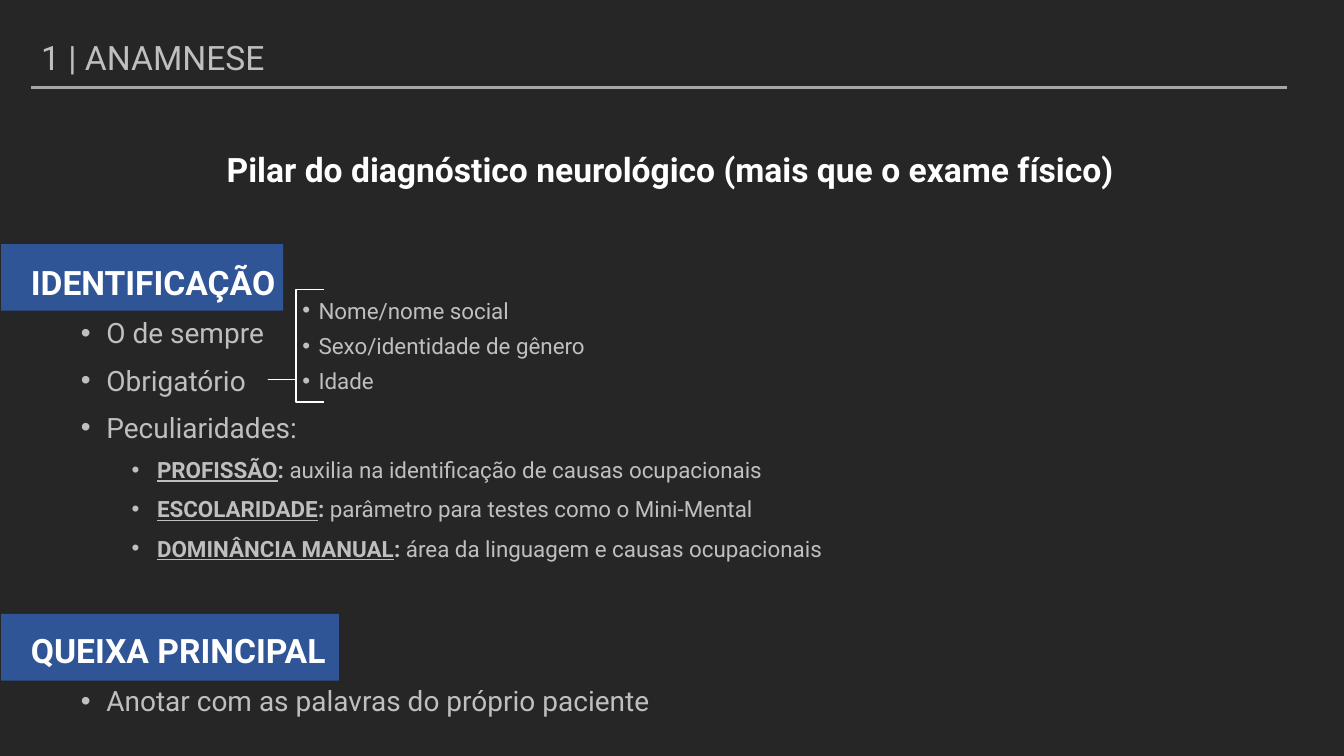
"""Builds the slide on anamnesis: identification and chief complaint."""
from dataclasses import dataclass

from lxml import etree
from pptx import Presentation
from pptx.dml.color import RGBColor
from pptx.enum.shapes import MSO_CONNECTOR, MSO_SHAPE
from pptx.enum.text import MSO_ANCHOR, MSO_AUTO_SIZE, PP_ALIGN
from pptx.oxml.ns import qn
from pptx.util import Cm, Pt

RECTANGLE = MSO_SHAPE.RECTANGLE
LEFT_BRACE = MSO_SHAPE.LEFT_BRACE
STRAIGHT = MSO_CONNECTOR.STRAIGHT
LEFT, CENTER = PP_ALIGN.LEFT, PP_ALIGN.CENTER
TOP, MIDDLE = MSO_ANCHOR.TOP, MSO_ANCHOR.MIDDLE
GROW, FIXED = MSO_AUTO_SIZE.SHAPE_TO_FIT_TEXT, MSO_AUTO_SIZE.NONE

FONT = "Roboto"
BACKGROUND, BLUE, WHITE = "262626", "2F5597", "FFFFFF"
LIGHT_GRAY, RULE_GRAY = "BFBFBF", "A6A6A6"


@dataclass(frozen=True)
class Box:
    left: float
    top: float
    width: float
    height: float

    def lengths(self) -> tuple:
        return Cm(self.left), Cm(self.top), Cm(self.width), Cm(self.height)


@dataclass(frozen=True)
class Style:
    size: int
    color: str = LIGHT_GRAY
    bold: bool = False
    level: int = 0
    margin: float = 0
    hanging: float = 0
    before: float = 0
    spacing: float = 1.2
    align: int = LEFT


@dataclass(frozen=True)
class Line:
    style: Style
    text: str
    term: str = ""
    before: float | None = None


TITLE = Style(24, spacing=1.0)
HEADLINE = Style(24, WHITE, True, align=CENTER)
HEADING = Style(24, WHITE, True)
TOPIC = Style(20, level=1, margin=1.9, hanging=0.64, before=5)
DETAIL = Style(16, level=2, margin=3.18, hanging=0.64, before=5)
REQUIRED = Style(16, margin=0.64, hanging=0.41, before=6, spacing=1.0)
SECTION_GAP = 43

HEADING_BANDS = [Box(0.03, 15.47, 8.51, 1.68), Box(0.03, 6.15, 7.11, 1.68)]
TITLE_BOX = Box(0.79, 0.81, 31.65, 1.27)
HEADLINE_BOX = Box(0.53, 3.43, 32.72, 2.08)
CONTENT_BOX = Box(0.53, 6.27, 32.72, 12.73)
REQUIRED_BOX = Box(7.14, 7.29, 11.4, 2.84)
BRACE_BOX = Box(6.76, 7.29, 1.4, 2.84)
RULE_TOP = 2.21

CONTENT = [
    Line(HEADING, "IDENTIFICAÇÃO"),
    Line(TOPIC, "O de sempre"),
    Line(TOPIC, "Obrigatório"),
    Line(TOPIC, "Peculiaridades:"),
    Line(DETAIL, " auxilia na identificação de causas ocupacionais", "PROFISSÃO"),
    Line(DETAIL, " parâmetro para testes como o Mini-Mental", "ESCOLARIDADE"),
    Line(DETAIL, " área da linguagem e causas ocupacionais", "DOMINÂNCIA MANUAL"),
    Line(HEADING, "QUEIXA PRINCIPAL", before=SECTION_GAP),
    Line(TOPIC, "Anotar com as palavras do próprio paciente"),
]
REQUIRED_DATA = ["Nome/nome social", "Sexo/identidade de gênero", "Idade"]


def rgb(value: str) -> RGBColor:
    return RGBColor.from_string(value)


def add_bullet(paragraph, style: Style) -> None:
    properties = paragraph._p.get_or_add_pPr()
    properties.set("marL", str(Cm(style.margin)))
    properties.set("indent", str(-Cm(style.hanging)))
    etree.SubElement(properties, qn("a:buFont")).set("typeface", "Arial")
    etree.SubElement(properties, qn("a:buChar")).set("char", "•")


def write_line(paragraph, line: Line, first: bool) -> None:
    style = line.style
    paragraph.level = style.level
    paragraph.alignment = style.align
    if style.hanging:
        add_bullet(paragraph, style)
    paragraph.line_spacing = style.spacing
    if not first:
        paragraph.space_before = Pt(style.before if line.before is None else line.before)
    if line.term:
        parts = [(line.term, True, True), (":", True, False), (line.text, False, False)]
    else:
        parts = [(line.text, style.bold, False)]
    for text, bold, underline in parts:
        run = paragraph.add_run()
        run.text = text
        run.font.name = FONT
        run.font.size = Pt(style.size)
        run.font.color.rgb = rgb(style.color)
        run.font.bold = bold
        run.font.underline = underline


def add_text(slide, box: Box, lines: list[Line], anchor=TOP, fit=FIXED) -> None:
    frame = slide.shapes.add_textbox(*box.lengths()).text_frame
    frame.word_wrap = True
    frame.auto_size = fit
    frame.vertical_anchor = anchor
    for index, line in enumerate(lines):
        paragraph = frame.add_paragraph() if index else frame.paragraphs[0]
        write_line(paragraph, line, index == 0)


def add_heading_band(slide, box: Box) -> None:
    band = slide.shapes.add_shape(RECTANGLE, *box.lengths())
    band.shadow.inherit = False
    band.fill.solid()
    band.fill.fore_color.rgb = rgb(BLUE)
    band.line.fill.background()


def add_title_rule(slide) -> None:
    right = TITLE_BOX.left + TITLE_BOX.width
    rule = slide.shapes.add_connector(
        STRAIGHT, Cm(TITLE_BOX.left), Cm(RULE_TOP), Cm(right), Cm(RULE_TOP)
    )
    rule.line.color.rgb = rgb(RULE_GRAY)
    rule.line.width = Pt(2.25)
    etree.SubElement(rule._element.spPr, qn("a:effectLst"))


def add_brace(slide) -> None:
    brace = slide.shapes.add_shape(LEFT_BRACE, *BRACE_BOX.lengths())
    brace.adjustments[0] = 0
    brace.adjustments[1] = 0.8
    brace.shadow.inherit = False
    brace.fill.background()
    brace.line.color.rgb = rgb(WHITE)
    brace.line.width = Pt(1)


def main() -> None:
    presentation = Presentation()
    presentation.slide_width = Cm(33.87)
    presentation.slide_height = Cm(19.05)
    slide = presentation.slides.add_slide(presentation.slide_layouts[6])
    slide.background.fill.solid()
    slide.background.fill.fore_color.rgb = rgb(BACKGROUND)

    for band in HEADING_BANDS:
        add_heading_band(slide, band)
    add_text(slide, TITLE_BOX, [Line(TITLE, "1 | ANAMNESE")], fit=GROW)
    add_title_rule(slide)
    add_text(slide, CONTENT_BOX, CONTENT)
    add_text(slide, REQUIRED_BOX, [Line(REQUIRED, text) for text in REQUIRED_DATA], MIDDLE)
    add_brace(slide)
    headline = "Pilar do diagnóstico neurológico (mais que o exame físico)"
    add_text(slide, HEADLINE_BOX, [Line(HEADLINE, headline)])
    presentation.save("out.pptx")


if __name__ == "__main__":
    main()
